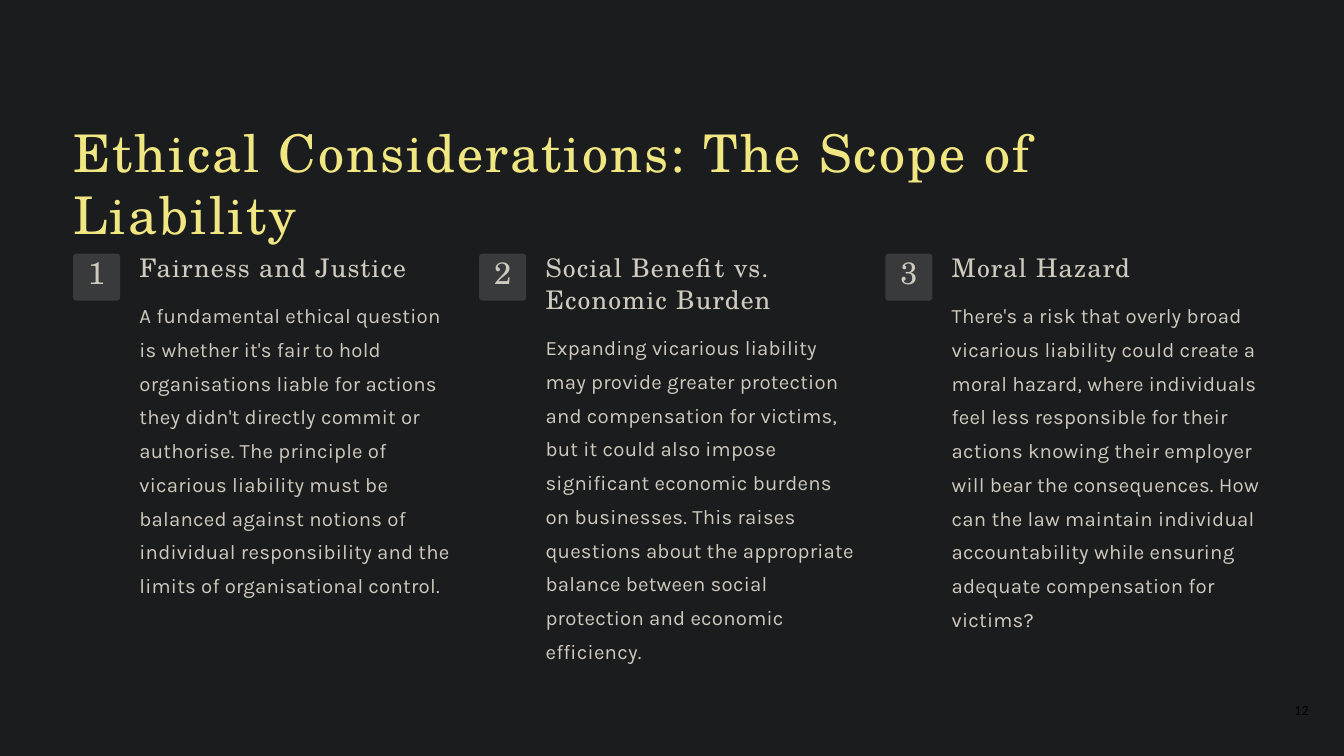
from dataclasses import dataclass

from pptx import Presentation
from pptx.dml.color import RGBColor
from pptx.enum.shapes import MSO_SHAPE
from pptx.enum.text import MSO_ANCHOR, MSO_AUTO_SIZE, PP_ALIGN
from pptx.util import Inches, Pt

LEFT, CENTER, RIGHT = PP_ALIGN.LEFT, PP_ALIGN.CENTER, PP_ALIGN.RIGHT
ROUNDED = MSO_SHAPE.ROUNDED_RECTANGLE
TOP = MSO_ANCHOR.TOP
NO_AUTOFIT = MSO_AUTO_SIZE.NONE
TITLE_ONLY = 5


@dataclass(frozen=True)
class TextStyle:
    """Font, size, colour and spacing of one kind of text."""
    font: str
    size: float
    color: str
    tracking: float = 0
    space_before: float = 0
    line_spacing: float = 1


class Theme:
    """Colours and text styles of the slide."""
    background = "1B1C1D"
    badge = "393A3B"
    title = TextStyle("TeX Gyre Schola", 44.5, "F1E782", 1.9)
    number = TextStyle("TeX Gyre Schola", 26.5, "CFCABE", space_before=1)
    heading = TextStyle("TeX Gyre Schola", 22, "CFCABE", 1, 1)
    body = TextStyle("Karla", 17.5, "CFCABE", 0.2, 9.5, 1.38)
    page = TextStyle("Calibri", 12, "000000")


TITLE = "Ethical Considerations: The Scope of Liability"
PAGE_NUMBER = "12"
COLUMNS = [
    (["Fairness and Justice"],
     "A fundamental ethical question is whether it's fair to hold organisations "
     "liable for actions they didn't directly commit or authorise. The principle "
     "of vicarious liability must be balanced against notions of individual "
     "responsibility and the limits of organisational control."),
    (["Social Benefit vs.", "Economic Burden"],
     "Expanding vicarious liability may provide greater protection and "
     "compensation for victims, but it could also impose significant economic "
     "burdens on businesses. This raises questions about the appropriate balance "
     "between social protection and economic efficiency."),
    (["Moral Hazard"],
     "There's a risk that overly broad vicarious liability could create a moral "
     "hazard, where individuals feel less responsible for their actions knowing "
     "their employer will bear the consequences. How can the law maintain "
     "individual accountability while ensuring adequate compensation for victims?"),
]


def write_text(shape, lines, align=LEFT):
    """Fill a shape with (text, style) paragraphs, without insets."""
    frame = shape.text_frame
    frame.word_wrap = True
    frame.auto_size = NO_AUTOFIT
    frame.vertical_anchor = TOP
    frame.margin_left = frame.margin_right = frame.margin_top = frame.margin_bottom = 0
    for index, (text, style) in enumerate(lines):
        paragraph = frame.add_paragraph() if index else frame.paragraphs[0]
        paragraph.alignment = align
        paragraph.space_before = Pt(style.space_before)
        paragraph.line_spacing = style.line_spacing
        paragraph.font.name = style.font
        paragraph.font.size = Pt(style.size)
        paragraph.font.color.rgb = RGBColor.from_string(style.color)
        run = paragraph.add_run()
        run.text = text
        run._r.get_or_add_rPr().set("spc", str(round(style.tracking * 100)))


def add_text(slide, left, top, width, height, lines, align=LEFT):
    """Add a text box measured in inches."""
    box = slide.shapes.add_textbox(Inches(left), Inches(top), Inches(width), Inches(height))
    write_text(box, lines, align)


def add_title(slide, left, top, width, height):
    """Place and format the title placeholder."""
    title = slide.shapes.title
    title.left, title.top = Inches(left), Inches(top)
    title.width, title.height = Inches(width), Inches(height)
    write_text(title, [(TITLE, Theme.title)])


def add_badge(slide, left, top, size, number):
    """Add a rounded square with its number."""
    badge = slide.shapes.add_shape(ROUNDED, Inches(left), Inches(top), Inches(size), Inches(size))
    badge.adjustments[0] = 0.07
    badge.shadow.inherit = False
    badge.fill.solid()
    badge.fill.fore_color.rgb = RGBColor.from_string(Theme.badge)
    badge.line.fill.background()
    inset = 0.15
    add_text(slide, left + inset, top, size - 2 * inset, 0.47,
             [(str(number), Theme.number)], CENTER)


def add_column(slide, left, top, width, height, number, headings, body):
    """Add a numbered badge with headings and body text to its right."""
    indent = 0.79
    add_badge(slide, left, top, 0.56, number)
    lines = [(heading, Theme.heading) for heading in headings] + [(body, Theme.body)]
    add_text(slide, left + indent, top - 0.02, width - indent, height, lines)


def build_slide(presentation):
    """Build the slide with its title, three columns and page number."""
    slide = presentation.slides.add_slide(presentation.slide_layouts[TITLE_ONLY])
    slide.background.fill.solid()
    slide.background.fill.fore_color.rgb = RGBColor.from_string(Theme.background)
    add_title(slide, 0.87, 1.43, 13.55, 0.77)
    pitch = 4.835
    for index, (headings, body) in enumerate(COLUMNS):
        add_column(slide, 0.87 + index * pitch, 3.02, 4.51, 4.56, index + 1, headings, body)
    add_text(slide, 15.08, 8.35, 0.5, 0.25, [(PAGE_NUMBER, Theme.page)], RIGHT)


def main():
    """Create and save the presentation."""
    presentation = Presentation()
    presentation.slide_width, presentation.slide_height = Inches(16), Inches(9)
    build_slide(presentation)
    presentation.save("out.pptx")


if __name__ == "__main__":
    main()
